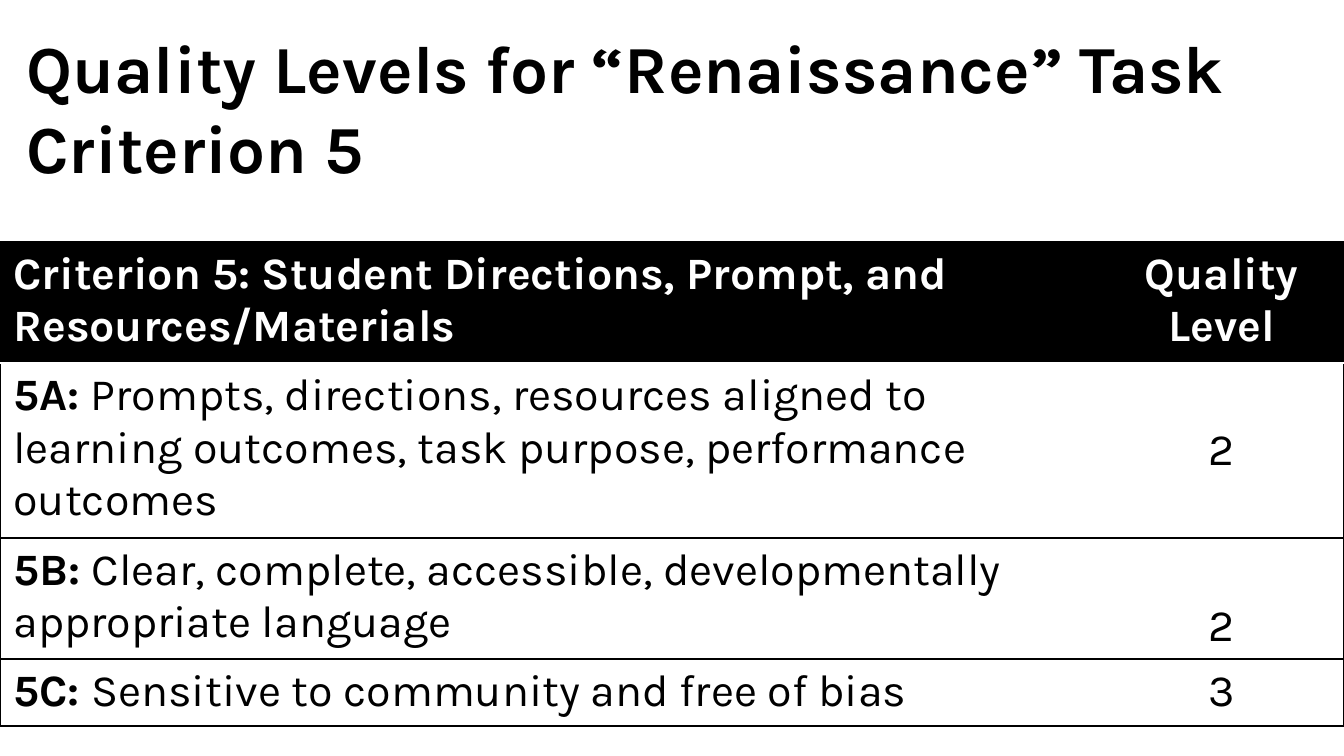
"""Build the slide of quality levels for criterion 5 of the Renaissance task."""
from lxml import etree
from pptx import Presentation
from pptx.dml.color import RGBColor
from pptx.enum import text
from pptx.oxml import ns
from pptx.util import Cm, Pt

TITLE = "Quality Levels for “Renaissance” Task Criterion 5"
HEADER = ("Criterion 5: Student Directions, Prompt, and Resources/Materials", "Quality Level")
MIDDLE, BOTTOM, TOP = (text.MSO_ANCHOR.MIDDLE, text.MSO_ANCHOR.BOTTOM, text.MSO_ANCHOR.TOP)
INDICATORS = [
    ("5A: ", "Prompts, directions, resources aligned to learning outcomes, "
             "task purpose, performance outcomes", "2", MIDDLE),
    ("5B: ", "Clear, complete, accessible, developmentally appropriate language", "2", BOTTOM),
    ("5C: ", "Sensitive to community and free of bias", "3", TOP),
]
THEME = {"font": "Karla", "ink": "000000", "paper": "FFFFFF",
         "title_size": 36, "table_size": 24, "rule": 1}
SLIDE_SIZE = (25.4, 14.28)
TITLE_BOX = (0.25, 0.2, 24.66, 3.63)
TABLE_TOP = 4.57
COLUMN_WIDTHS = (20.78, 4.62)
ROW_HEIGHTS = (2.23, 3.21, 2.23, 1.25)


def add_run(paragraph, words, size, color, bold):
    run = paragraph.add_run()
    run.text = words
    run.font.name = THEME["font"]
    run.font.size = Pt(size)
    run.font.bold = bold
    run.font.color.rgb = RGBColor.from_string(color)


def set_borders(cell, colors):
    properties = cell._tc.get_or_add_tcPr()
    for position, (side, color) in enumerate(colors.items()):
        line = etree.Element(ns.qn(f"a:ln{side}"), w=str(Pt(THEME["rule"])))
        if color:
            fill = etree.SubElement(line, ns.qn("a:solidFill"))
            etree.SubElement(fill, ns.qn("a:srgbClr"), val=color)
        else:
            etree.SubElement(line, ns.qn("a:noFill"))
        properties.insert(position, line)


def add_title(slide):
    frame = slide.shapes.add_textbox(*map(Cm, TITLE_BOX)).text_frame
    frame.word_wrap = True
    frame.vertical_anchor = MIDDLE
    add_run(frame.paragraphs[0], TITLE, THEME["title_size"], THEME["ink"], True)


def add_levels(slide):
    ink, paper = THEME["ink"], THEME["paper"]
    rows = [([(HEADER[0], True)], [(HEADER[1], True)], TOP)]
    rows += [([(code, True), (wording, False)], [(level, False)], anchor)
             for code, wording, level, anchor in INDICATORS]
    levels = slide.shapes.add_table(
        len(rows), len(COLUMN_WIDTHS), Cm(0), Cm(TABLE_TOP),
        Cm(sum(COLUMN_WIDTHS)), Cm(sum(ROW_HEIGHTS))).table
    levels.horz_banding = False
    for column, width in zip(levels.columns, COLUMN_WIDTHS):
        column.width = Cm(width)
    for r, (indicator, level, anchor) in enumerate(rows):
        levels.rows[r].height = Cm(ROW_HEIGHTS[r])
        is_header = r == 0
        for c, runs in enumerate((indicator, level)):
            cell = levels.cell(r, c)
            cell.fill.solid()
            cell.fill.fore_color.rgb = RGBColor.from_string(ink if is_header else paper)
            set_borders(cell, {"L": None if c else ink, "R": ink if c else None,
                               "T": paper if r == 1 else ink,
                               "B": paper if is_header else ink})
            paragraph = cell.text_frame.paragraphs[0]
            if c:
                cell.vertical_anchor = anchor
                paragraph.alignment = text.PP_ALIGN.CENTER
            for words, bold in runs:
                add_run(paragraph, words, THEME["table_size"],
                        paper if is_header else ink, bold)


def main():
    deck = Presentation()
    deck.slide_width, deck.slide_height = map(Cm, SLIDE_SIZE)
    slide = deck.slides.add_slide(deck.slide_layouts[6])
    add_title(slide)
    add_levels(slide)
    deck.save("out.pptx")


if __name__ == "__main__":
    main()
